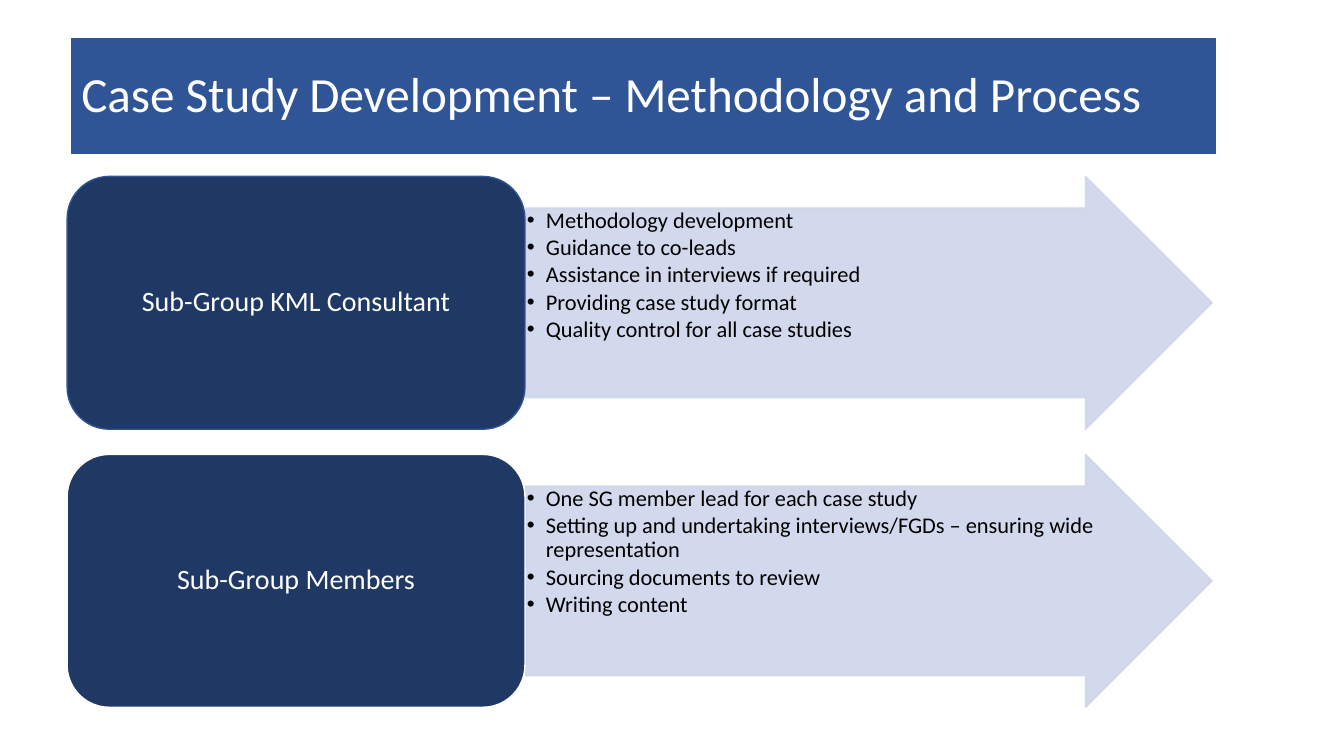
from dataclasses import dataclass

import pptx
import pptx.dml.color
import pptx.enum.shapes
import pptx.enum.text
import pptx.oxml
import pptx.oxml.ns
import pptx.util
from lxml import etree

RGBColor = pptx.dml.color.RGBColor
Shapes = pptx.enum.shapes.MSO_SHAPE
Align = pptx.enum.text.PP_ALIGN

WHITE = RGBColor(0xFF, 0xFF, 0xFF)
BLACK = RGBColor(0x00, 0x00, 0x00)
BLUE = RGBColor(0x2F, 0x55, 0x97)
NAVY = RGBColor(0x20, 0x38, 0x64)
PALE_BLUE = RGBColor(0xCF, 0xD5, 0xEA)

FONT = "Calibri"
SLIDE_WIDTH = pptx.util.Emu(12192000)
SLIDE_HEIGHT = pptx.util.Emu(6858000)
COLUMNS, ROWS = 160, 90

ROLE_COLUMN, ROLE_COLUMNS = 8, 54.5
ARROW_COLUMN, ARROW_COLUMNS = 62.6, 81.7
BAND_TOP, BAND_ROWS, BAND_STEP = 21, 30.1, 33.1


@dataclass(frozen=True)
class Area:
    """A place on the slide, in grid columns and rows."""
    column: float
    row: float
    columns: float
    rows: float


@dataclass(frozen=True)
class Role:
    name: str
    border: RGBColor
    tasks: tuple[str, ...]


ROLES = (
    Role("Sub-Group KML Consultant", BLUE, (
        "Methodology development",
        "Guidance to co-leads",
        "Assistance in interviews if required",
        "Providing case study format",
        "Quality control for all case studies",
    )),
    Role("Sub-Group Members", WHITE, (
        "One SG member lead for each case study",
        "Setting up and undertaking interviews/FGDs – ensuring wide representation",
        "Sourcing documents to review",
        "Writing content",
    )),
)


def across(columns: float) -> int:
    return round(SLIDE_WIDTH * columns / COLUMNS)


def down(rows: float) -> int:
    return round(SLIDE_HEIGHT * rows / ROWS)


def add_box(slide, kind, area: Area, fill: RGBColor, border: RGBColor, width: float = 1):
    shape = slide.shapes.add_shape(kind, across(area.column), down(area.row),
                                   across(area.columns), down(area.rows))
    shape.shadow.inherit = False
    shape.fill.solid()
    shape.fill.fore_color.rgb = fill
    shape.line.color.rgb = border
    shape.line.width = pptx.util.Pt(width)
    shape.text_frame.word_wrap = True
    shape.text_frame.vertical_anchor = pptx.enum.text.MSO_ANCHOR.MIDDLE
    return shape


def write(paragraph, text: str, size: float, color: RGBColor, alignment) -> None:
    paragraph.alignment = alignment
    paragraph.line_spacing = 0.9
    run = paragraph.add_run()
    run.text = text
    run.font.name = FONT
    run.font.size = pptx.util.Pt(size)
    run.font.color.rgb = color


def set_opacity(shape, percent: int) -> None:
    """Make both the fill and the line of the shape translucent."""
    for color in shape._element.spPr.iter(pptx.oxml.ns.qn("a:srgbClr")):
        etree.SubElement(color, pptx.oxml.ns.qn("a:alpha"), val=str(percent * 1000))


def add_bullet(paragraph) -> None:
    indent = pptx.util.Inches(0.19)
    properties = paragraph._p.get_or_add_pPr()
    properties.set("marL", str(indent))
    properties.set("indent", str(-indent))
    etree.SubElement(properties, pptx.oxml.ns.qn("a:buFont"), typeface="Arial")
    etree.SubElement(properties, pptx.oxml.ns.qn("a:buChar"), char="•")


def add_task_arrow(slide, tasks: tuple[str, ...], row: float) -> None:
    area = Area(ARROW_COLUMN, row, ARROW_COLUMNS, BAND_ROWS)
    arrow = add_box(slide, Shapes.RIGHT_ARROW, area, PALE_BLUE, PALE_BLUE)
    arrow.adjustments[0] = 0.75
    set_opacity(arrow, 90)
    frame = arrow.text_frame
    frame.vertical_anchor = pptx.enum.text.MSO_ANCHOR.TOP
    frame.margin_left = frame.margin_right = pptx.util.Inches(0.01)
    frame.margin_top = frame.margin_bottom = pptx.util.Inches(0.01)
    for index, task in enumerate(tasks):
        paragraph = frame.add_paragraph() if index else frame.paragraphs[0]
        paragraph.level = 1
        write(paragraph, task, 16, BLACK, Align.LEFT)
        paragraph.space_after = pptx.util.Pt(2.2)
        add_bullet(paragraph)


def add_role_box(slide, role: Role, row: float) -> None:
    area = Area(ROLE_COLUMN, row, ROLE_COLUMNS, BAND_ROWS)
    box = add_box(slide, Shapes.ROUNDED_RECTANGLE, area, NAVY, role.border)
    frame = box.text_frame
    frame.margin_left = frame.margin_right = pptx.util.Inches(0.08)
    frame.margin_top = frame.margin_bottom = pptx.util.Inches(0.04)
    write(frame.paragraphs[0], role.name, 20, WHITE, Align.CENTER)


def add_title(slide) -> None:
    title = add_box(slide, Shapes.RECTANGLE, Area(8.5, 4.6, 136.2, 13.7), BLUE, BLUE, 0.75)
    write(title.text_frame.paragraphs[0],
          "Case Study Development – Methodology and Process", 35.1, WHITE, Align.LEFT)


def main() -> None:
    presentation = pptx.Presentation()
    presentation.slide_width = SLIDE_WIDTH
    presentation.slide_height = SLIDE_HEIGHT
    slide = presentation.slides.add_slide(presentation.slide_layouts[6])
    for index, role in enumerate(ROLES):
        row = BAND_TOP + index * BAND_STEP
        add_task_arrow(slide, role.tasks, row)
        add_role_box(slide, role, row)
    add_title(slide)
    presentation.save("out.pptx")


if __name__ == "__main__":
    main()
